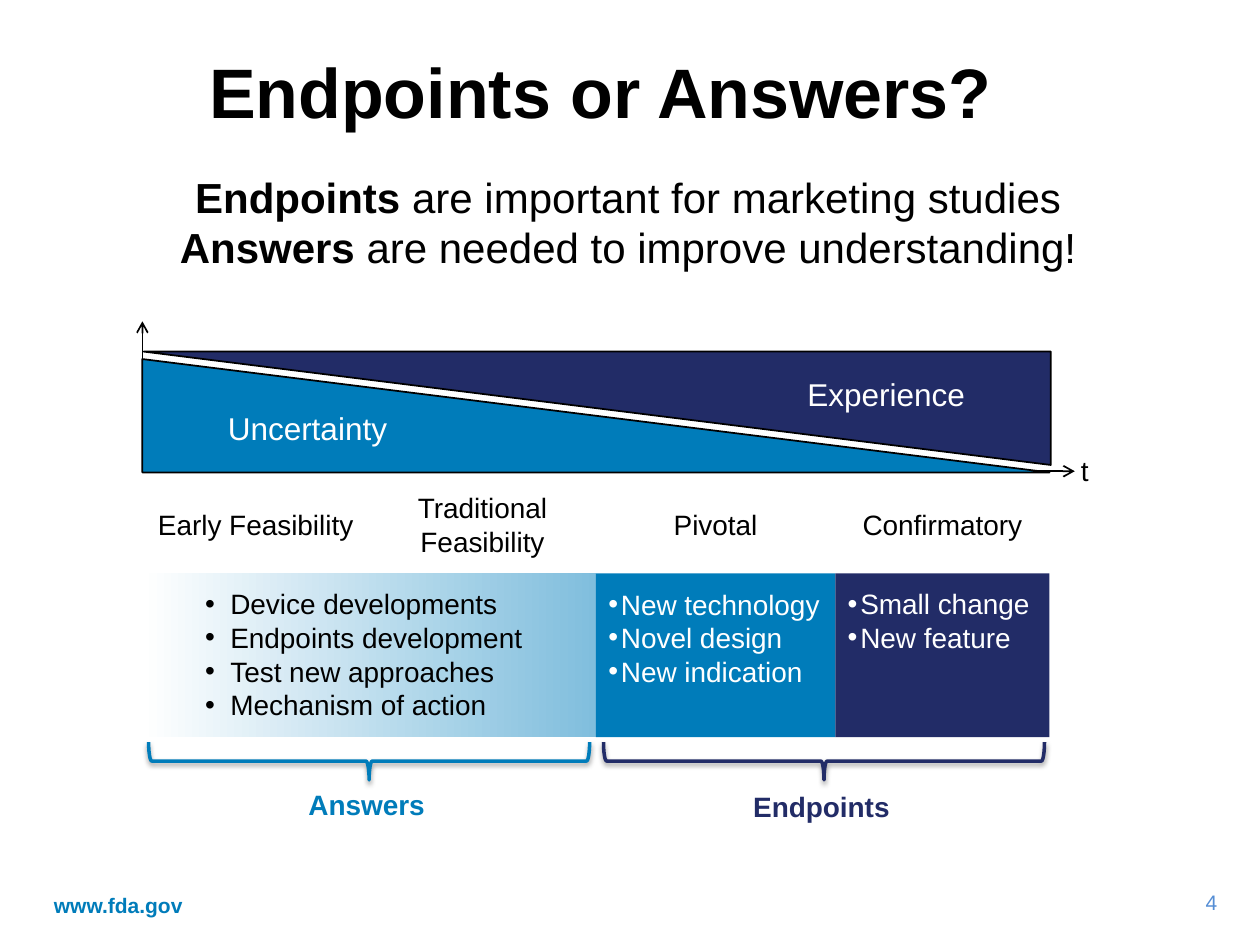
"""Build the slide comparing endpoints and answers across study phases."""
from lxml.etree import SubElement
from pptx import Presentation
from pptx.dml.color import RGBColor
from pptx.enum.shapes import MSO_CONNECTOR, MSO_SHAPE
from pptx.enum.text import MSO_ANCHOR, PP_ALIGN
from pptx.oxml.ns import qn
from pptx.util import Inches, Pt

BLACK = RGBColor(0x00, 0x00, 0x00)
WHITE = RGBColor(0xFF, 0xFF, 0xFF)
BLUE = RGBColor(0x00, 0x7C, 0xBA)
NAVY = RGBColor(0x22, 0x2C, 0x67)
PALE_BLUE = RGBColor(0x80, 0xBE, 0xDD)
PAGE_BLUE = RGBColor(0x55, 0x8E, 0xD5)
LEFT, CENTER, RIGHT = PP_ALIGN.LEFT, PP_ALIGN.CENTER, PP_ALIGN.RIGHT
TOP, MIDDLE = MSO_ANCHOR.TOP, MSO_ANCHOR.MIDDLE


class SlideBuilder:
    def __init__(self, slide, font="Arial"):
        self.slide = slide
        self.font = font

    def text(self, box, lines, size=16, color=BLACK, bold=False, align=LEFT,
             anchor=TOP, wrap=True, bullet=0, spacing=None):
        s = self.slide.shapes.add_textbox(*map(Inches, box))
        tf = s.text_frame
        for name, value in {"word_wrap": wrap, "vertical_anchor": anchor}.items():
            setattr(tf, name, value)
        for i, line in enumerate(lines):
            p = tf.paragraphs[0] if i == 0 else tf.add_paragraph()
            if bullet:
                self.bullet(p, bullet)
            for name, value in {"alignment": align, "line_spacing": spacing}.items():
                setattr(p, name, value)
            self.run(p, line, size, color, bold)
        return s

    def run(self, p, text, size, color, bold):
        r = p.add_run()
        r.text = text
        style = {"name": self.font, "size": Pt(size), "bold": bold}
        for name, value in style.items():
            setattr(r.font, name, value)
        r.font.color.rgb = color

    def bullet(self, p, indent):
        pPr = p._p.get_or_add_pPr()
        pPr.set("marL", str(Inches(indent)))
        pPr.set("indent", str(Inches(-indent)))
        SubElement(pPr, qn("a:buFont"), typeface=self.font)
        SubElement(pPr, qn("a:buChar"), char="•")

    def shape(self, kind, box, fill=None, line=None, width=1, rotation=0):
        s = self.slide.shapes.add_shape(kind, *map(Inches, box))
        s.shadow.inherit = False
        s.rotation = rotation
        for part, color in ((s.fill, fill), (s.line.fill, line)):
            if color is None:
                part.background()
            else:
                part.solid()
                part.fore_color.rgb = color
        if line is not None:
            s.line.width = Pt(width)
        return s

    def gradient(self, box, colors):
        s = self.shape(MSO_SHAPE.RECTANGLE, box)
        s.fill.gradient()
        s.fill.gradient_angle = 0
        for i, (stop, color) in enumerate(zip(s.fill.gradient_stops, colors)):
            stop.position = i
            stop.color.rgb = color

    def brace(self, box, color):
        s = self.shape(MSO_SHAPE.LEFT_BRACE, box, line=color, width=2, rotation=270)
        effects = s._element.spPr.find(qn("a:effectLst"))
        shadow = SubElement(effects, qn("a:outerShdw"), blurRad=str(Pt(3.1)),
                            dist=str(Pt(1.6)), dir="5400000", rotWithShape="0")
        rgb = SubElement(shadow, qn("a:srgbClr"), val=str(BLACK))
        SubElement(rgb, qn("a:alpha"), val="38000")

    def arrow(self, start, end):
        s = self.slide.shapes.add_connector(
            MSO_CONNECTOR.STRAIGHT, *map(Inches, (*start, *end)))
        s.line.color.rgb = BLACK
        s.line.width = Pt(1)
        SubElement(s.line._get_or_add_ln(), qn("a:tailEnd"), type="arrow")
        SubElement(s._element.spPr, qn("a:effectLst"))


def add_heading(b):
    b.text((9.35, 7.01, 0.41, 0.3), ["4"], 12, PAGE_BLUE, align=RIGHT, wrap=False)
    b.text((0.33, 6.98, 3.17, 0.4), ["www.fda.gov"], 12, BLUE, True, anchor=MIDDLE)
    b.text((0.49, 0.21, 8.55, 1.01), ["Endpoints or Answers?"], 40, bold=True,
           align=CENTER, anchor=MIDDLE)
    s = b.text((0.33, 1.31, 9.31, 0.91), ["Endpoints"], 24, bold=True, align=CENTER)
    p = s.text_frame.paragraphs[0]
    b.run(p, " are important for marketing studies", 24, BLACK, False)
    p.add_line_break()
    b.run(p, "Answers", 24, BLACK, True)
    b.run(p, " are needed to improve understanding!", 24, BLACK, False)


def add_timeline(b):
    triangle = MSO_SHAPE.RIGHT_TRIANGLE
    b.shape(triangle, (1.14, 2.79, 7.2, 0.9), NAVY, BLACK, rotation=180)
    b.text((6.31, 2.93, 1.6, 0.37), ["Experience"], 18, WHITE)
    b.arrow((1.13, 3.74), (8.53, 3.74))
    b.arrow((1.13, 3.75), (1.13, 2.55))
    b.shape(triangle, (1.13, 2.85, 7.2, 0.9), BLUE, BLACK)
    b.text((1.71, 3.23, 1.6, 0.37), ["Uncertainty"], 18, WHITE, spacing=0.9)
    b.text((8.48, 3.55, 0.25, 0.43), ["t"], wrap=False)


def add_phases(b):
    left = 1.13
    for name, width in (("Early Feasibility", 1.8), ("Traditional Feasibility", 1.8),
                        ("Pivotal", 1.9), ("Confirmatory", 1.7)):
        b.text((left, 3.83, width, 0.66), [name], align=CENTER, anchor=MIDDLE)
        left += width
    b.gradient((1.13, 4.55, 3.6, 1.3), (WHITE, PALE_BLUE))
    b.text((1.53, 4.61, 2.8, 1.2),
           ["Device developments", "Endpoints development",
            "Test new approaches", "Mechanism of action"], bullet=0.2)
    for left, width, fill, lines in (
            (4.73, 1.9, BLUE, ["New technology", "Novel design", "New indication"]),
            (6.63, 1.7, NAVY, ["Small change", "New feature"])):
        b.shape(MSO_SHAPE.RECTANGLE, (left, 4.55, width, 1.3), fill)
        b.text((left, 4.61, width, 0.2 + 0.25 * len(lines)), lines,
               color=WHITE, bullet=0.1)
    for name, color, brace_left, box in (
            ("Answers", BLUE, 2.78, (2.35, 6.2, 1.16, 0.37)),
            ("Endpoints", NAVY, 6.39, (5.88, 6.22, 1.33, 0.37))):
        b.brace((brace_left, 4.29, 0.3, 3.5), color)
        b.text(box, [name], color=color, bold=True, wrap=False)


def main():
    prs = Presentation()
    prs.slide_width, prs.slide_height = Inches(10), Inches(7.5)
    b = SlideBuilder(prs.slides.add_slide(prs.slide_layouts[6]))
    add_heading(b)
    add_timeline(b)
    add_phases(b)
    prs.save("out.pptx")


if __name__ == "__main__":
    main()
